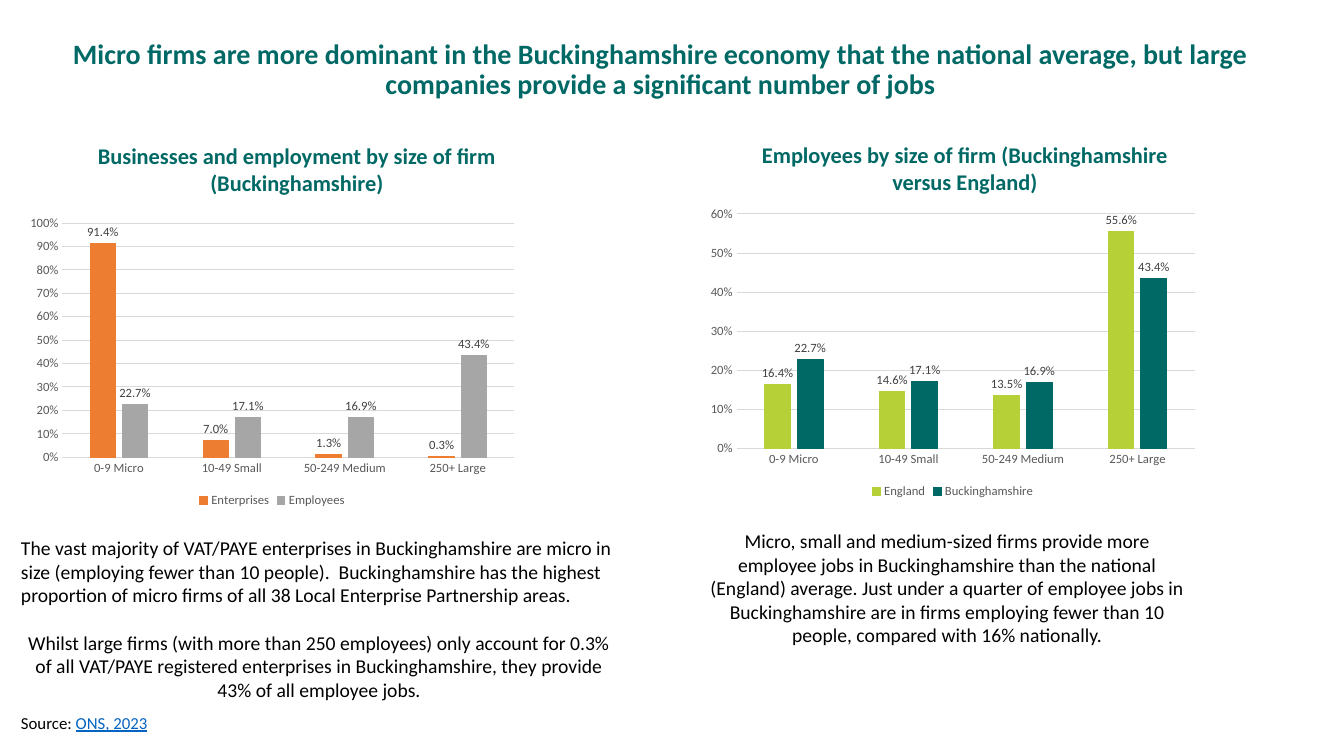
from dataclasses import dataclass

from lxml.etree import SubElement
from pptx import Presentation
from pptx.chart.data import CategoryChartData
from pptx.dml.color import RGBColor
from pptx.enum.chart import XL_CHART_TYPE as ChartType
from pptx.enum.chart import XL_LABEL_POSITION as LabelPosition
from pptx.enum.chart import XL_LEGEND_POSITION as LegendPosition
from pptx.enum.chart import XL_TICK_MARK as TickMark
from pptx.enum.text import MSO_ANCHOR as Anchor
from pptx.enum.text import PP_ALIGN as Align
from pptx.util import Inches, Pt

FONT = "Calibri"
TEAL, BLACK, GREY, RULE, LINK = "006965", "000000", "595959", "D9D9D9", "0563C1"
UNIT = Inches(0.1)
SIZES = ["0-9 Micro", "10-49 Small", "50-249 Medium", "250+ Large"]
EMPLOYEES = [0.227, 0.171, 0.169, 0.434]


@dataclass
class Box:
    left: float
    top: float
    width: float
    height: float

    def inner(self, left, top, width, height):
        return Box(self.left + left, self.top + top, width, height)

    def lengths(self):
        return [round(n * UNIT) for n in (self.left, self.top, self.width, self.height)]


def color(value):
    return RGBColor.from_string(value)


def style(font, size, shade, bold=False):
    font.name, font.size, font.bold = FONT, Pt(size), bold
    font.color.rgb = color(shade)


def add_text(page, box, lines, size, shade=BLACK, bold=False, gap=0):
    frame = page.shapes.add_textbox(*box.lengths()).text_frame
    frame.word_wrap = True
    for index, (line, align) in enumerate(lines):
        para = frame.paragraphs[0] if index == 0 else frame.add_paragraph()
        para.text, para.alignment = line, align
        if index:
            para.space_before = Pt(gap)
        style(para.font, size, shade, bold)
    return frame


def add_title(page, box, wording):
    title = page.shapes.title
    title.left, title.top, title.width, title.height = box.lengths()
    frame = title.text_frame
    frame.word_wrap, frame.vertical_anchor = True, Anchor.MIDDLE
    para = frame.paragraphs[0]
    para.text, para.alignment, para.line_spacing = wording, Align.CENTER, 0.9
    style(para.font, 20, TEAL, True)


def style_axes(chart, top, step):
    categories, values = chart.category_axis, chart.value_axis
    for axis in (categories, values):
        axis.major_tick_mark = axis.minor_tick_mark = TickMark.NONE
        style(axis.tick_labels.font, 9, GREY)
    values.minimum_scale, values.maximum_scale, values.major_unit = 0, top, step
    values.tick_labels.number_format = "0%"
    values.tick_labels.number_format_is_linked = False
    values.format.line.fill.background()
    values.has_major_gridlines = True
    for line in (categories.format.line, values.major_gridlines.format.line):
        line.color.rgb, line.width = color(RULE), Pt(0.75)


def add_columns(page, box, series, top):
    data = CategoryChartData(number_format="0.0%")
    data.categories = SIZES
    for name, values, _ in series:
        data.add_series(name, values)
    frame = page.shapes.add_chart(ChartType.COLUMN_CLUSTERED, *box.lengths(), data)
    chart = frame.chart
    chart.has_title = False
    style(chart.font, 10, BLACK)
    style_axes(chart, top, 0.1)
    chart.has_legend = True
    chart.legend.position = LegendPosition.BOTTOM
    chart.legend.include_in_layout = False
    style(chart.legend.font, 9, GREY)
    plot = chart.plots[0]
    plot.gap_width, plot.overlap, plot.vary_by_categories = 219, -27, False
    for bars, (_, _, shade) in zip(plot.series, series):
        bars.format.fill.solid()
        bars.format.fill.fore_color.rgb = color(shade)
        bars.format.line.color.rgb = color(shade)
        bars.format.line.width = Pt(0.75)
        labels = bars.data_labels
        labels.show_value, labels.position = True, LabelPosition.OUTSIDE_END
        labels.number_format, labels.number_format_is_linked = "0.0%", False
        style(labels.font, 9, "404040")


def add_panel(page, box, heading, heading_span, chart_at, series, top, comments):
    indent, width = heading_span
    add_text(page, box.inner(indent, 0, width, 6.4), [(heading, Align.CENTER)],
             16, TEAL, True)
    add_columns(page, box.inner(*chart_at, 50, 30), series, top)
    height = 17.5 if len(comments) > 1 else 12.8
    add_text(page, box.inner(0, box.height - height, box.width, height),
             comments, 14, gap=17)


def add_source(page, box):
    frame = add_text(page, box, [("Source: ", Align.LEFT)], 12)
    span = frame.paragraphs[0].add_run()
    span.text = "ONS, 2023"
    span.font.underline = True
    span.font.color.rgb = color(LINK)


def main():
    deck = Presentation()
    deck.slide_width, deck.slide_height = Inches(13.33), Inches(7.5)
    page = deck.slides.add_slide(deck.slide_layouts[5])
    add_title(page, Box(1.1, -0.3, 128.8, 14.5),
              "Micro firms are more dominant in the Buckinghamshire economy that the "
              "national average, but large companies provide a significant number of jobs")
    add_panel(
        page, Box(1.1, 13.6, 61.1, 56.6),
        "Businesses and employment by size of firm (Buckinghamshire)",
        (0, 56.7), (0.9, 7.2),
        [("Enterprises", [0.914, 0.07, 0.013, 0.003], "ED7D31"),
         ("Employees", EMPLOYEES, "A6A6A6")], 1,
        [("The vast majority of VAT/PAYE enterprises in Buckinghamshire are micro in "
          "size (employing fewer than 10 people).  Buckinghamshire has the highest "
          "proportion of micro firms of all 38 Local Enterprise Partnership areas.",
          Align.LEFT),
         ("Whilst large firms (with more than 250 employees) only account for 0.3% of "
          "all VAT/PAYE registered enterprises in Buckinghamshire, they provide 43% of "
          "all employee jobs.", Align.CENTER)])
    add_panel(
        page, Box(69, 13.5, 49.9, 51.3),
        "Employees by size of firm (Buckinghamshire versus England)",
        (3.5, 46.4), (0.5, 6.4),
        [("England", [0.164, 0.146, 0.135, 0.556], "B5D137"),
         ("Buckinghamshire", EMPLOYEES, TEAL)], 0.6,
        [("Micro, small and medium-sized firms provide more employee jobs in "
          "Buckinghamshire than the national (England) average. Just under a quarter "
          "of employee jobs in Buckinghamshire are in firms employing fewer than 10 "
          "people, compared with 16% nationally.", Align.CENTER)])
    add_source(page, Box(1.1, 70.2, 73, 3))
    deck.save("out.pptx")


if __name__ == "__main__":
    main()
